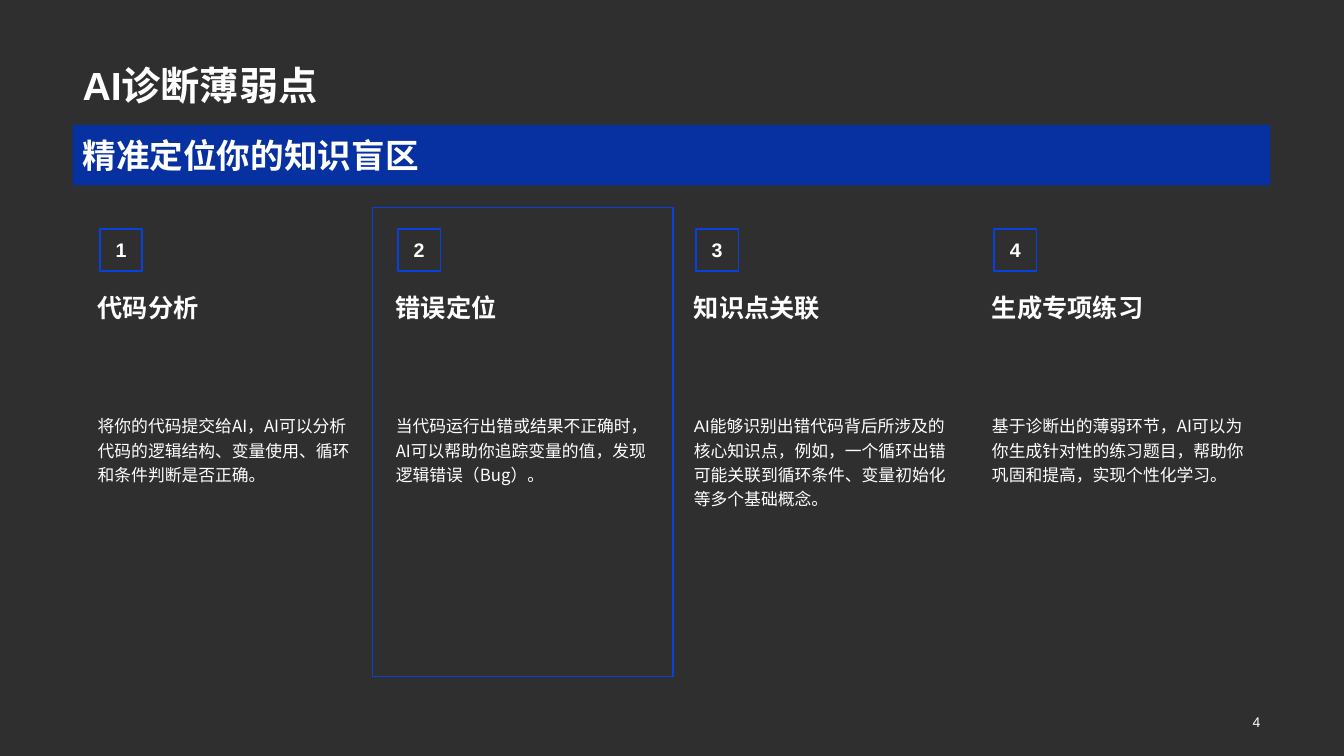
from dataclasses import dataclass

from lxml.etree import SubElement
from pptx import Presentation
from pptx.dml.color import RGBColor
from pptx.enum.shapes import MSO_SHAPE as Preset
from pptx.enum.text import MSO_ANCHOR as Anchor, PP_ALIGN as Align
from pptx.oxml.ns import qn
from pptx.shapes.autoshape import Shape
from pptx.slide import Slide
from pptx.util import Inches, Pt

BACKGROUND = RGBColor(0x2F, 0x2F, 0x2F)
WHITE = RGBColor(0xFF, 0xFF, 0xFF)
BANNER_BLUE = RGBColor(0x05, 0x31, 0xA7)
OUTLINE_BLUE = RGBColor(0x07, 0x42, 0xDF)
LATIN, CHINESE = "Arial", "Noto Sans CJK SC"

# Grid, in inches
MARGIN, CONTENT_WIDTH = 0.72, 11.88
FIRST_COLUMN, LAST_COLUMN = 0.87, 9.74
COLUMN_WIDTH = 2.72
BADGE_ROW, HEADING_ROW, BODY_ROW, GRID_BOTTOM = 2.27, 2.79, 4.04, 6.71
BADGE_SIZE, BADGE_INDENT = 0.42, 0.12
FRAME_TOP, FRAME_PADDING = 2.06, 0.13
HIGHLIGHTED_COLUMN = 1


@dataclass(frozen=True)
class Area:
    left: float
    top: float
    width: float
    height: float

    def lengths(self) -> list[Inches]:
        return [Inches(v) for v in (self.left, self.top, self.width, self.height)]


@dataclass(frozen=True)
class Style:
    size: float
    font: str = CHINESE
    bold: bool = False
    align: Align = Align.LEFT
    anchor: Anchor = Anchor.TOP
    spacing: float = 1.0
    wrap: bool = True


@dataclass(frozen=True)
class Step:
    heading: str
    body: str
    body_font: str = CHINESE


TITLE = Style(28, LATIN, bold=True, anchor=Anchor.BOTTOM)
BANNER = Style(24, bold=True, anchor=Anchor.MIDDLE)
BADGE = Style(14, LATIN, bold=True, align=Align.CENTER, anchor=Anchor.MIDDLE, wrap=False)
HEADING = Style(18, bold=True, spacing=1.2)
PAGE_NUMBER = Style(10, LATIN, align=Align.RIGHT, anchor=Anchor.MIDDLE)

STEPS = [
    Step("代码分析", "将你的代码提交给AI，AI可以分析代码的逻辑结构、变量使用、循环和条件判断是否正确。"),
    Step("错误定位", "当代码运行出错或结果不正确时，AI可以帮助你追踪变量的值，发现逻辑错误（Bug）。"),
    Step("知识点关联", "AI能够识别出错代码背后所涉及的核心知识点，例如，一个循环出错可能关联到"
         "循环条件、变量初始化等多个基础概念。", LATIN),
    Step("生成专项练习", "基于诊断出的薄弱环节，AI可以为你生成针对性的练习题目，"
         "帮助你巩固和提高，实现个性化学习。"),
]


def column_left(index: int) -> float:
    return FIRST_COLUMN + index * (LAST_COLUMN - FIRST_COLUMN) / (len(STEPS) - 1)


def write(box: Shape, text: str, style: Style) -> None:
    frame = box.text_frame
    frame.word_wrap = style.wrap
    frame.vertical_anchor = style.anchor
    para = frame.paragraphs[0]
    para.alignment = style.align
    para.line_spacing = style.spacing
    span = para.add_run()
    span.text = text
    span.font.size = Pt(style.size)
    span.font.bold = style.bold
    span.font.color.rgb = WHITE
    span.font.name = style.font
    SubElement(span.font._element, qn("a:ea"), typeface=CHINESE)


def add_text(page: Slide, area: Area, text: str, style: Style) -> None:
    write(page.shapes.add_textbox(*area.lengths()), text, style)


def add_outline(page: Slide, preset: Preset, area: Area) -> Shape:
    box = page.shapes.add_shape(preset, *area.lengths())
    box.shadow.inherit = False
    box.fill.background()
    box.line.color.rgb = OUTLINE_BLUE
    box.line.width = Pt(1)
    return box


def add_banner(page: Slide, area: Area, text: str) -> None:
    banner = page.shapes.add_shape(Preset.RECTANGLE, *area.lengths())
    banner.shadow.inherit = False
    banner.fill.solid()
    banner.fill.fore_color.rgb = BANNER_BLUE
    color = banner._element.spPr.find(qn("a:solidFill")).find(qn("a:srgbClr"))
    SubElement(color, qn("a:alpha"), val="95000")
    banner.line.fill.background()
    write(banner, text, BANNER)


def add_step(page: Slide, index: int, step: Step) -> None:
    left = column_left(index)
    badge_area = Area(left + BADGE_INDENT, BADGE_ROW, BADGE_SIZE, BADGE_SIZE)
    badge = add_outline(page, Preset.RECTANGLE, badge_area)
    write(badge, str(index + 1), BADGE)
    heading_area = Area(left, HEADING_ROW, COLUMN_WIDTH, BODY_ROW - HEADING_ROW)
    add_text(page, heading_area, step.heading, HEADING)
    body_area = Area(left, BODY_ROW, COLUMN_WIDTH, GRID_BOTTOM - BODY_ROW)
    add_text(page, body_area, step.body, Style(12, step.body_font, spacing=1.2))


def main() -> None:
    deck = Presentation()
    deck.slide_width, deck.slide_height = Inches(13.33), Inches(7.5)
    page = deck.slides.add_slide(deck.slide_layouts[6])
    page.background.fill.solid()
    page.background.fill.fore_color.rgb = BACKGROUND

    # Page number
    add_text(page, Area(8.6, 7.01, 4, 0.3), "4", PAGE_NUMBER)

    # Frame around the highlighted step
    frame_area = Area(column_left(HIGHLIGHTED_COLUMN) - FRAME_PADDING, FRAME_TOP,
                      COLUMN_WIDTH + 2 * FRAME_PADDING, GRID_BOTTOM - FRAME_TOP)
    frame = add_outline(page, Preset.ROUNDED_RECTANGLE, frame_area)
    frame.adjustments[0] = 0

    # Banner and steps
    add_banner(page, Area(MARGIN, 1.24, CONTENT_WIDTH, 0.6), "精准定位你的知识盲区")
    for index, step in enumerate(STEPS):
        add_step(page, index, step)

    # Title
    add_text(page, Area(MARGIN, 0.14, CONTENT_WIDTH, 0.98), "AI诊断薄弱点", TITLE)

    deck.save("out.pptx")


if __name__ == "__main__":
    main()
